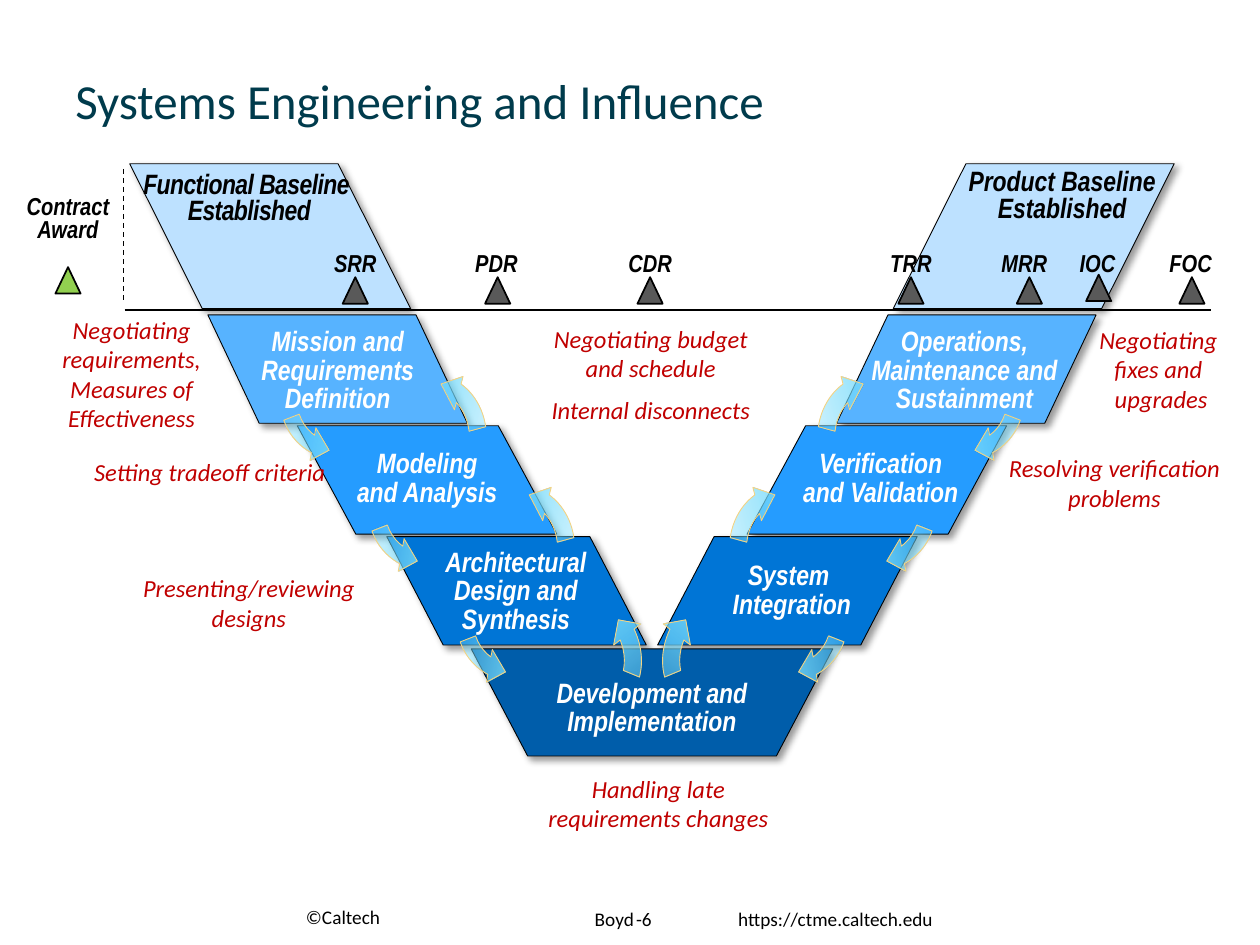
from lxml import etree
from pptx import Presentation
from pptx.dml.color import RGBColor
from pptx.enum.dml import MSO_LINE
from pptx.enum.shapes import MSO_CONNECTOR, MSO_SHAPE
from pptx.enum.text import MSO_ANCHOR, PP_ALIGN
from pptx.oxml import parse_xml
from pptx.oxml.ns import nsdecls, qn
from pptx.util import Inches, Pt

PARALLELOGRAM, TRAPEZOID = MSO_SHAPE.PARALLELOGRAM, MSO_SHAPE.TRAPEZOID
TRIANGLE, ARROW = MSO_SHAPE.ISOSCELES_TRIANGLE, MSO_SHAPE.CIRCULAR_ARROW
LEFT, CENTER, RIGHT = PP_ALIGN.LEFT, PP_ALIGN.CENTER, PP_ALIGN.RIGHT
TOP, MIDDLE, BOTTOM = MSO_ANCHOR.TOP, MSO_ANCHOR.MIDDLE, MSO_ANCHOR.BOTTOM
STRAIGHT, DASH = MSO_CONNECTOR.STRAIGHT, MSO_LINE.DASH

BLACK, WHITE = RGBColor(0, 0, 0), RGBColor(255, 255, 255)
TEAL, RED = RGBColor(0x00, 0x3B, 0x4C), RGBColor(0xC0, 0, 0)
GREEN, GRAY = RGBColor(0x92, 0xD0, 0x50), RGBColor(0x59, 0x59, 0x59)
GOLD = RGBColor(0xF2, 0xD3, 0x83)
BASELINE_BLUE, NAVY = RGBColor(0xBD, 0xE1, 0xFF), RGBColor(0x00, 0x5D, 0xAA)
LEVEL_BLUES = (RGBColor(0x57, 0xB3, 0xFF), RGBColor(0x25, 0x9C, 0xFF),
               RGBColor(0x00, 0x75, 0xD6))

SHADOW = (f'<a:effectLst {nsdecls("a")}><a:outerShdw blurRad="50800" dist="38100" '
          'dir="2700000" algn="tl" rotWithShape="0"><a:srgbClr val="000000">'
          '<a:alpha val="40000"/></a:srgbClr></a:outerShdw></a:effectLst>')
ARROW_FILL = (f'<a:gradFill {nsdecls("a")} rotWithShape="1"><a:gsLst>' + "".join(
    f'<a:gs pos="{pos}"><a:srgbClr val="78DCFC"><a:alpha val="{alpha}"/></a:srgbClr></a:gs>'
    for pos, alpha in ((0, 0), (50000, 80000), (100000, 0))
) + '</a:gsLst><a:lin ang="5400000" scaled="0"/></a:gradFill>')
DOWN_ADJ = (0.125, 11.423, 204.577, 180.957, 0.125)
UP_ADJ = (0.125, 11.423, 204.577, 179.76, 0.125)
LEVEL_SLANTS = (0.474, 0.54, 0.521)
STEP_X, STEP_Y = 0.71, 0.88


def inches(box):
    return [Inches(v) for v in box]


def add_text(s, text, box, size=14, font="Calibri", color=BLACK, bold=False, italic=False,
             align=LEFT, anchor=TOP, leading=1.0, before=0, inset=(0.1, 0.05), wrap=True,
             tracking=None):
    """Newlines start paragraphs; vertical tabs break lines."""
    tf = s.shapes.add_textbox(*inches(box)).text_frame
    tf.word_wrap = wrap
    tf.vertical_anchor = anchor
    tf.margin_left = tf.margin_right = Inches(inset[0])
    tf.margin_top = tf.margin_bottom = Inches(inset[1])
    tf.text = text
    for i, p in enumerate(tf.paragraphs):
        p.alignment, p.line_spacing = align, leading
        p.space_before = Pt(before if i else 0)
        for r in p.runs:
            r.font.name, r.font.size = font, Pt(size)
            r.font.bold, r.font.italic = bold, italic
            r.font.color.rgb = color
            if tracking:
                r.font._element.set("spc", str(tracking))


def add_label(s, text, box, **kw):
    add_text(s, text, box, **{"font": "Arial Narrow", "bold": True, "italic": True,
                              "align": CENTER, "leading": 0.8, "inset": (0, 0),
                              "wrap": False, **kw})


def add_preset(s, kind, box, fill=None, line=BLACK, width=0.5, adj=(), flip="", rot=0):
    sp = s.shapes.add_shape(kind, *inches(box))
    sp.shadow.inherit = False
    if fill is not None:
        sp.fill.solid()
        sp.fill.fore_color.rgb = fill
    sp.line.color.rgb, sp.line.width = line, Pt(width)
    for i, value in enumerate(adj):
        sp.adjustments[i] = value
    sp.rotation = rot
    for axis in flip:
        sp._element.spPr.find(qn("a:xfrm")).set("flip" + axis.upper(), "1")
    return sp


def add_block(s, kind, box, fill, slant, flip):
    spPr = add_preset(s, kind, box, fill, adj=(slant,), flip=flip)._element.spPr
    spPr.replace(spPr.find(qn("a:effectLst")), parse_xml(SHADOW))


def add_flow_arrow(s, box, adj, flip, rot):
    spPr = add_preset(s, ARROW, box, line=GOLD, adj=adj, flip=flip, rot=rot)._element.spPr
    spPr.find(qn("a:prstGeom")).addnext(parse_xml(ARROW_FILL))


def add_line(s, ends, width, dash=None):
    c = s.shapes.add_connector(STRAIGHT, *inches(ends))
    c.line.color.rgb, c.line.width = BLACK, Pt(width)
    if dash:
        c.line.dash_style = dash
    etree.SubElement(c._element.spPr, qn("a:effectLst"))


def place(box, dx, dy, w, h, mirrored=False):
    """Box of a part, counted from the right edge when mirrored."""
    x, y, width, _ = box
    return (x + (width - dx - w if mirrored else dx), y + dy, w, h)


def draw_blocks(s, box):
    for mirrored in (True, False):
        flip = "hv" if mirrored else "v"
        add_block(s, PARALLELOGRAM, place(box, 0, 0, 2.23, 1.15, mirrored),
                  BASELINE_BLUE, 0.501, flip)
        for i, (fill, slant) in enumerate(zip(LEVEL_BLUES, LEVEL_SLANTS)):
            part = place(box, 0.62 + i * STEP_X, 1.2 + i * STEP_Y, 2.06, 0.86, mirrored)
            add_block(s, PARALLELOGRAM, part, fill, slant, flip)
    add_block(s, TRAPEZOID, place(box, 2.71, 3.85, 2.87, 0.85), NAVY, 0.527, "v")


def draw_flow_arrows(s, box):
    arrows = [(1.11 + i * 0.7, 1.34 + i * STEP_Y, 1.09, 1.05, DOWN_ADJ, "v", 100.2)
              for i in range(3)]
    arrows += [(1.73 + i * 0.7, 1.67 + i * STEP_Y, 1.24, 1.09, UP_ADJ, "h", 104.4)
               for i in range(2)]
    arrows.append((3.01, 3.25, 1.09, 1.24, UP_ADJ, "h", 142.1))
    for *part, adj, flip, rot in arrows:
        add_flow_arrow(s, place(box, *part), adj, flip, rot)
        other_flip = "hv" if flip == "v" else ""
        add_flow_arrow(s, place(box, *part, mirrored=True), adj, other_flip, 360 - rot)


def draw_block_labels(s, box):
    for text, *part in (
            ("Mission and\vRequirements\vDefinition", 1.04, 1.31, 1.22, 0.69),
            ("Modeling\vand Analysis", 1.8, 2.28, 1.12, 0.46),
            ("Architectural\vDesign and\vSynthesis", 2.5, 3.06, 1.13, 0.69),
            ("Development and\vImplementation", 3.38, 4.1, 1.53, 0.46),
            ("System \vIntegration", 4.78, 3.17, 0.95, 0.46),
            ("Verification\vand Validation", 5.34, 2.28, 1.24, 0.46),
            ("Operations,\vMaintenance and\vSustainment", 5.88, 1.31, 1.49, 0.69)):
        add_label(s, text, place(box, *part), size=16, color=WHITE, leading=0.85)
    add_label(s, "Functional Baseline \vEstablished", place(box, 0.1, 0.07, 1.7, 0.43),
              size=16, tracking=-30)
    add_label(s, "Product Baseline Established", place(box, 6.65, 0.05, 1.5, 0.43),
              size=16, wrap=True)


def draw_timeline(s, box):
    x, y, w, h = box
    add_line(s, (x + 0.78, y + h, x + w, y + h), 1)
    add_line(s, (x + 0.77, y + 0.04, x + 0.77, y + 1.09), 0.75, DASH)
    add_label(s, "Contract\nAward", place(box, 0, 0.26, 0.66, 0.38))
    add_preset(s, TRIANGLE, place(box, 0.23, 0.82, 0.2, 0.21), GREEN, width=1)
    for name, label_mid, mark_mid, mark_top in (
            ("SRR", 2.61, 2.61, 0.9), ("PDR", 3.73, 3.74, 0.9), ("CDR", 4.95, 4.95, 0.9),
            ("TRR", 7.02, 7.02, 0.9), ("MRR", 7.92, 7.96, 0.9), ("IOC", 8.5, 8.51, 0.88),
            ("FOC", 9.24, 9.25, 0.9)):
        add_preset(s, TRIANGLE, place(box, mark_mid - 0.1, mark_top, 0.2, 0.21), GRAY, width=1)
        add_label(s, name, place(box, label_mid - 0.22, 0.71, 0.44, 0.19))


def draw_influence_notes(s, box):
    for text, dx, dy, h in (
            ("Negotiating requirements, Measures of Effectiveness", 0, 0, 1.04),
            ("Setting tradeoff criteria", 0.62, 1.13, 0.57),
            ("Presenting/reviewing designs", 0.93, 2.05, 0.57),
            ("Negotiating budget and schedule\nInternal disconnects", 4.12, 0.07, 0.93),
            ("Handling late requirements changes", 4.18, 3.64, 0.57),
            ("Negotiating \vfixes and \vupgrades", 8.17, 0.08, 0.81),
            ("Resolving verification problems", 7.8, 1.1, 0.57)):
        add_text(s, text, place(box, dx, dy, 2.05, h), color=RED, italic=True,
                 align=CENTER, before=7)


def draw_footer(s, box):
    for text, dx, dy, w, h, align, anchor in (
            ("©Caltech", 0, 0.02, 1.17, 0.25, LEFT, BOTTOM),
            ("Boyd", 1.47, 0.02, 1.33, 0.25, RIGHT, MIDDLE),
            ("-6", 2.62, 0.02, 0.67, 0.25, LEFT, MIDDLE),
            ("https://ctme.caltech.edu", 3.43, 0, 2.02, 0.29, LEFT, TOP)):
        add_text(s, text, place(box, dx, dy, w, h), size=11, align=align, anchor=anchor)


def main():
    prs = Presentation()
    prs.slide_width, prs.slide_height = Inches(10), Inches(7.5)
    s = prs.slides.add_slide(prs.slide_layouts[6])
    add_text(s, "Systems Engineering and Influence", (0.5, 0.08, 9, 1), size=28,
             color=TEAL, anchor=BOTTOM, leading=0.9)
    vee = (1.03, 1.3, 8.29, 4.7)
    draw_blocks(s, vee)
    draw_timeline(s, (0.21, 1.3, 9.4, 1.16))
    draw_flow_arrows(s, vee)
    draw_block_labels(s, vee)
    draw_influence_notes(s, (0.02, 2.45, 9.98, 4.21))
    draw_footer(s, (2.33, 7.15, 5.45, 0.29))
    prs.save("out.pptx")


if __name__ == "__main__":
    main()
